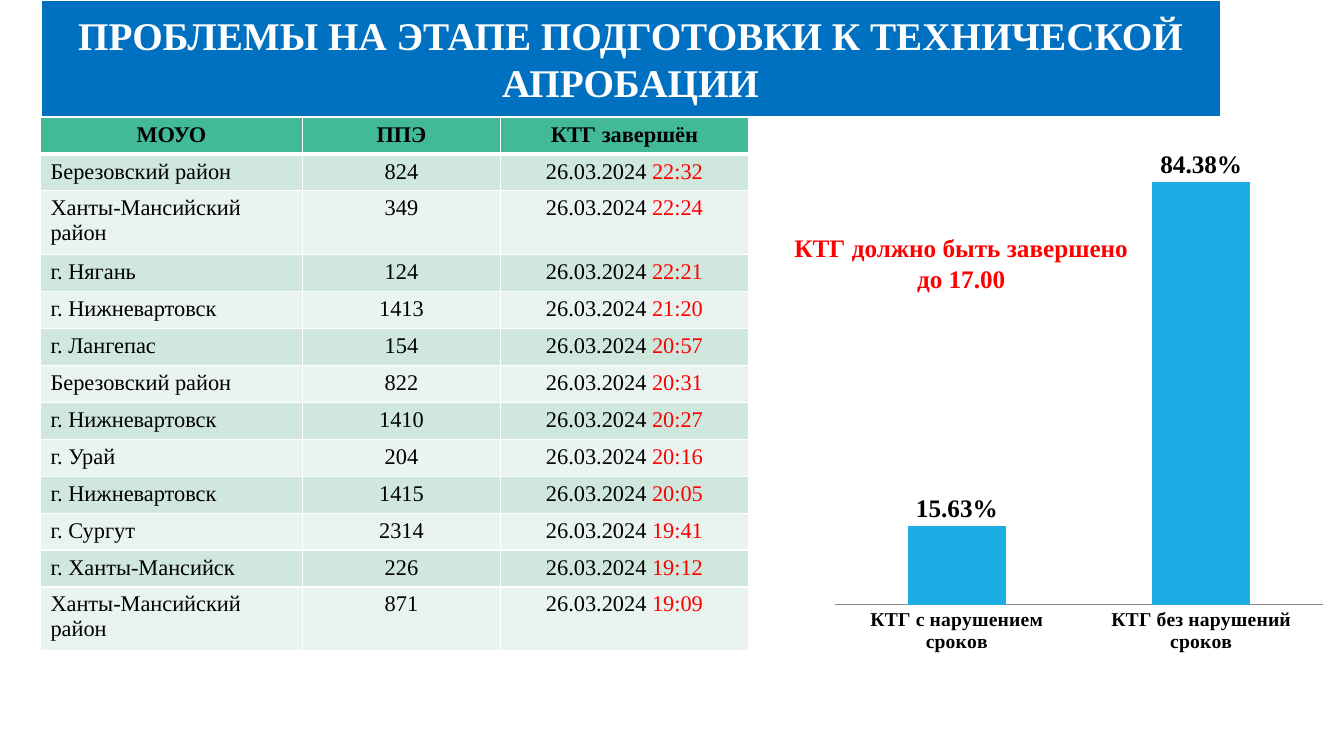
import pptx
import pptx.chart.data
import pptx.dml.color
import pptx.enum.chart
import pptx.enum.text
import pptx.oxml
import pptx.oxml.ns
import pptx.util

Cm = pptx.util.Cm
Pt = pptx.util.Pt
RGBColor = pptx.dml.color.RGBColor
Align = pptx.enum.text.PP_ALIGN

FONT = "Times New Roman"
WHITE = RGBColor(0xFF, 0xFF, 0xFF)
BLACK = RGBColor(0, 0, 0)
RED = RGBColor(0xFF, 0, 0)
TITLE_BLUE = RGBColor(0x00, 0x70, 0xC0)
HEADER_GREEN = RGBColor(0x42, 0xBA, 0x97)
ROW_GREENS = (RGBColor(0xCF, 0xE7, 0xDD), RGBColor(0xE9, 0xF3, 0xEF))
BAR_BLUE = RGBColor(0x1C, 0xAD, 0xE4)
AXIS_GREY = RGBColor(0x86, 0x86, 0x86)

TITLE = "ПРОБЛЕМЫ НА ЭТАПЕ ПОДГОТОВКИ К ТЕХНИЧЕСКОЙ АПРОБАЦИИ"
HEADERS = ("МОУО", "ППЭ", "КТГ завершён")
DATE = "26.03.2024 "
LONG_NAME = "Ханты-Мансийский район"
RECORDS = (
    ("Березовский район", "824", "22:32"),
    (LONG_NAME, "349", "22:24"),
    ("г. Нягань", "124", "22:21"),
    ("г. Нижневартовск", "1413", "21:20"),
    ("г. Лангепас", "154", "20:57"),
    ("Березовский район", "822", "20:31"),
    ("г. Нижневартовск", "1410", "20:27"),
    ("г. Урай", "204", "20:16"),
    ("г. Нижневартовск", "1415", "20:05"),
    ("г. Сургут", "2314", "19:41"),
    ("г. Ханты-Мансийск", "226", "19:12"),
    (LONG_NAME, "871", "19:09"),
)
COLUMN_SHARES = (0.37, 0.28, 0.35)
SHARES = {"КТГ с нарушением сроков": 0.1563, "КТГ без нарушений сроков": 0.8438}


def set_font(font, size, color=BLACK, bold=False):
    font.name = FONT
    font.size = Pt(size)
    font.bold = bold
    font.color.rgb = color


def write_text(para, text, size=16, color=BLACK, bold=False, align=Align.CENTER):
    para.alignment = align
    span = para.add_run()
    span.text = text
    set_font(span.font, size, color, bold)


def set_borders(cell, bottom_width):
    """Give the cell white borders, placed ahead of its fill."""
    widths = {"lnL": 1, "lnR": 1, "lnT": 1, "lnB": bottom_width}
    properties = cell._tc.get_or_add_tcPr()
    for index, (side, width) in enumerate(widths.items()):
        border = pptx.oxml.parse_xml(
            f'<a:{side} {pptx.oxml.ns.nsdecls("a")} w="{Pt(width)}">'
            f'<a:solidFill><a:srgbClr val="{WHITE}"/></a:solidFill></a:{side}>'
        )
        properties.insert(index, border)


def add_title(page, left, top, width, height):
    box = page.shapes.title
    box.left, box.top, box.width, box.height = left, top, width, height
    box.fill.solid()
    box.fill.fore_color.rgb = TITLE_BLUE
    box.line.color.rgb = WHITE
    box.line.width = Pt(1.5)
    frame = box.text_frame
    frame.word_wrap = True
    frame.auto_size = pptx.enum.text.MSO_AUTO_SIZE.NONE
    frame.vertical_anchor = pptx.enum.text.MSO_ANCHOR.MIDDLE
    write_text(frame.paragraphs[0], TITLE, size=28, color=WHITE, bold=True)


def add_finish_table(page, left, top, width, height):
    table = page.shapes.add_table(
        len(RECORDS) + 1, len(HEADERS), left, top, width, height
    ).table
    table.horz_banding = False
    for column, share in zip(table.columns, COLUMN_SHARES):
        column.width = int(width * share)

    # Header row
    table.rows[0].height = Cm(0.93)
    for cell, header in zip(table.rows[0].cells, HEADERS):
        write_text(cell.text_frame.paragraphs[0], header, bold=True)
        cell.fill.solid()
        cell.fill.fore_color.rgb = HEADER_GREEN
        set_borders(cell, 3)

    # Data rows, in alternating shades
    for index, (district, site, time) in enumerate(RECORDS):
        row = table.rows[index + 1]
        row.height = Cm(1.61 if district == LONG_NAME else 0.93)
        paras = [cell.text_frame.paragraphs[0] for cell in row.cells]
        write_text(paras[0], district, align=Align.LEFT)
        write_text(paras[1], site)
        write_text(paras[2], DATE)
        write_text(paras[2], time, color=RED)
        for cell in row.cells:
            cell.fill.solid()
            cell.fill.fore_color.rgb = ROW_GREENS[index % 2]
            set_borders(cell, 1)


def add_share_chart(page, left, top, width, height):
    data = pptx.chart.data.CategoryChartData(number_format="0.00%")
    data.categories = list(SHARES)
    data.add_series("Series 1", list(SHARES.values()))
    chart = page.shapes.add_chart(
        pptx.enum.chart.XL_CHART_TYPE.COLUMN_CLUSTERED, left, top, width, height, data
    ).chart
    chart.has_legend = False
    chart.has_title = False
    set_font(chart.font, 10)

    # Axes
    categories = chart.category_axis
    categories.major_tick_mark = pptx.enum.chart.XL_TICK_MARK.NONE
    categories.format.line.color.rgb = AXIS_GREY
    set_font(categories.tick_labels.font, 14, bold=True)
    values = chart.value_axis
    values.minimum_scale = 0
    values.maximum_scale = 0.9
    values.has_major_gridlines = False
    values.visible = False

    # Columns and their labels
    plot = chart.plots[0]
    plot.gap_width = 150
    plot.overlap = -25
    plot.vary_by_categories = False
    columns = plot.series[0].format.fill
    columns.solid()
    columns.fore_color.rgb = BAR_BLUE
    plot.has_data_labels = True
    labels = plot.data_labels
    labels.show_value = True
    labels.number_format = "0.00%"
    labels.number_format_is_linked = False
    labels.position = pptx.enum.chart.XL_LABEL_POSITION.OUTSIDE_END
    set_font(labels.font, 18, bold=True)


def add_deadline(page, left, top, width, height):
    frame = page.shapes.add_textbox(left, top, width, height).text_frame
    frame.word_wrap = True
    write_text(
        frame.paragraphs[0], "КТГ должно быть завершено до 17.00",
        size=18, color=RED, bold=True,
    )


def main():
    deck = pptx.Presentation()
    deck.slide_width, deck.slide_height = Cm(33.87), Cm(19.05)
    page = deck.slides.add_slide(deck.slide_layouts.get_by_name("Title Only"))
    add_title(page, Cm(1.02), Cm(0), Cm(29.74), Cm(2.95))
    add_finish_table(page, Cm(1.02), Cm(2.95), Cm(17.84), Cm(13.45))
    add_share_chart(page, Cm(20.78), Cm(3.63), Cm(12.83), Cm(13.08))
    add_deadline(page, Cm(19.74), Cm(5.74), Cm(8.97), Cm(1.8))
    deck.save("out.pptx")


if __name__ == "__main__":
    main()
